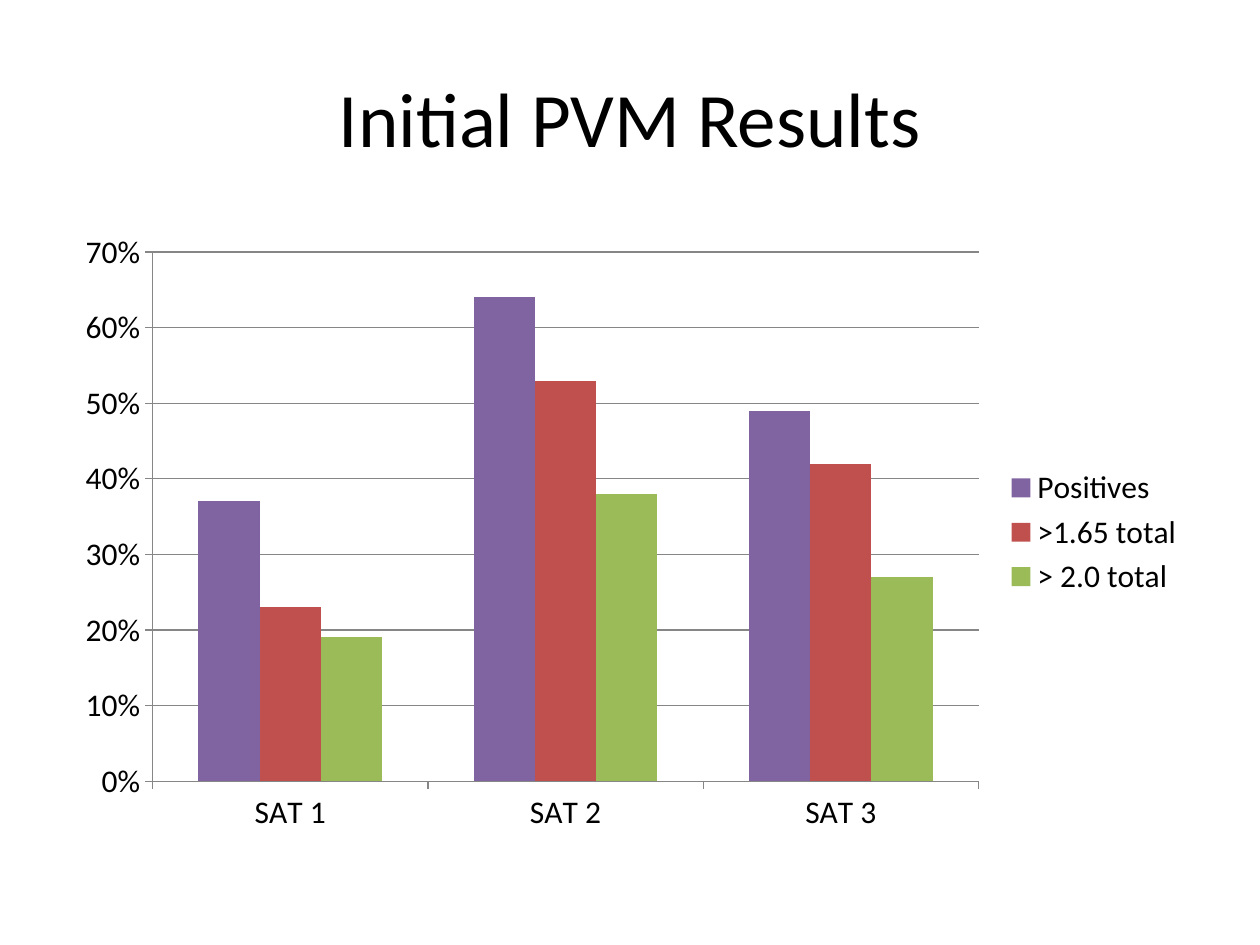
from pptx import Presentation
from pptx.chart.data import CategoryChartData
from pptx.dml.color import RGBColor
from pptx.enum import chart as ch, text
from pptx.util import Inches, Pt

TITLE = "Initial PVM Results"
FONT = "Calibri"
CATEGORIES = ["SAT 1", "SAT 2", "SAT 3"]
SERIES = [
    ("Positives", (0.37, 0.64, 0.49), "8064A2"),
    (">1.65 total", (0.23, 0.53, 0.42), "C0504D"),
    ("> 2.0 total", (0.19, 0.38, 0.27), "9BBB59"),
]
LEFT, WIDTH = Inches(0.5), Inches(9)


def rgb(value):
    """Turn a hex string into a colour."""
    return RGBColor.from_string(value)


def set_font(font, size):
    """Apply the slide's typeface in black at a point size."""
    font.name, font.size, font.bold = FONT, Pt(size), False
    font.color.rgb = rgb("000000")


def set_line(line):
    """Draw a thin grey chart line."""
    line.color.rgb = rgb("868686")
    line.width = Pt(0.75)


def add_title(slide):
    """Add the centred heading."""
    tf = slide.shapes.add_textbox(LEFT, Inches(0.3), WIDTH, Inches(1.25)).text_frame
    tf.word_wrap = True
    tf.vertical_anchor = text.MSO_ANCHOR.MIDDLE
    p = tf.paragraphs[0]
    p.text = TITLE
    p.alignment = text.PP_ALIGN.CENTER
    set_font(p.font, 44)


def add_results_chart(slide):
    """Add the clustered columns of results by SAT."""
    data = CategoryChartData(number_format="0%")
    data.categories = CATEGORIES
    for name, values, _ in SERIES:
        data.add_series(name, values)
    chart = slide.shapes.add_chart(
        ch.XL_CHART_TYPE.COLUMN_CLUSTERED, LEFT, Inches(1.75), WIDTH, Inches(4.95), data
    ).chart
    chart.has_title = False
    set_font(chart.font, 18)

    plot = chart.plots[0]
    plot.vary_by_categories = False
    plot.gap_width, plot.overlap = 150, 0
    for series, (_, _, color) in zip(plot.series, SERIES):
        series.format.fill.solid()
        series.format.fill.fore_color.rgb = rgb(color)
        series.invert_if_negative = False

    for axis in (chart.category_axis, chart.value_axis):
        axis.major_tick_mark = ch.XL_TICK_MARK.OUTSIDE
        axis.minor_tick_mark = ch.XL_TICK_MARK.NONE
        set_font(axis.tick_labels.font, 18)
        set_line(axis.format.line)
    axis = chart.value_axis
    axis.minimum_scale, axis.maximum_scale, axis.major_unit = 0, 0.7, 0.1
    axis.tick_labels.number_format = "0%"
    axis.tick_labels.number_format_is_linked = False
    axis.has_major_gridlines = True
    set_line(axis.major_gridlines.format.line)

    chart.has_legend = True
    chart.legend.position = ch.XL_LEGEND_POSITION.RIGHT
    chart.legend.include_in_layout = False
    set_font(chart.legend.font, 18)


prs = Presentation()
prs.slide_width, prs.slide_height = Inches(10), Inches(7.5)
slide = prs.slides.add_slide(prs.slide_layouts[6])
add_title(slide)
add_results_chart(slide)
prs.save("out.pptx")
